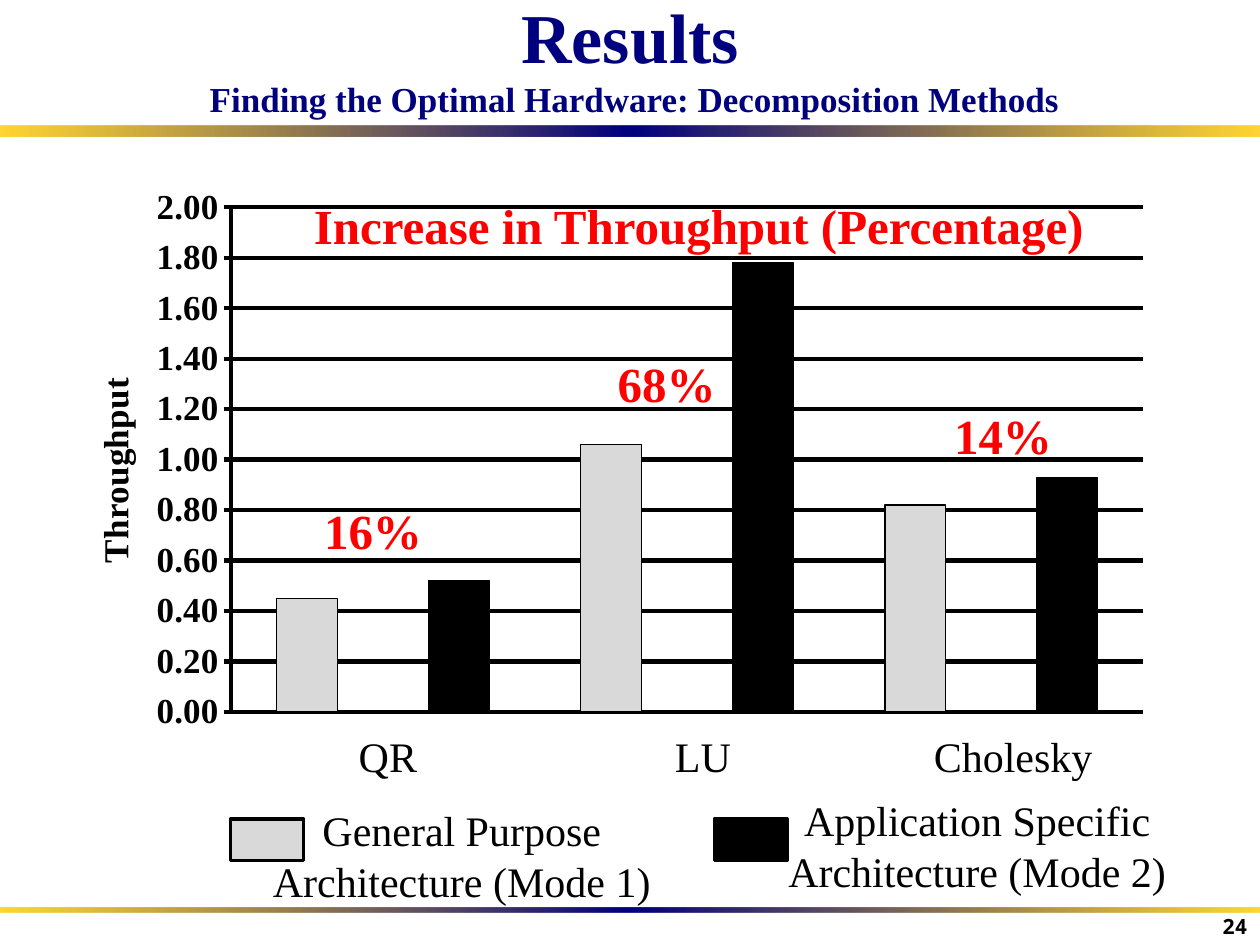
from lxml import etree
from pptx import Presentation
from pptx.chart.data import CategoryChartData
from pptx.dml.color import RGBColor
from pptx.enum.chart import XL_CHART_TYPE, XL_TICK_MARK
from pptx.enum.shapes import MSO_SHAPE
from pptx.enum.text import MSO_ANCHOR, MSO_AUTO_SIZE, PP_ALIGN
from pptx.oxml import parse_xml
from pptx.oxml.ns import nsdecls, qn
from pptx.util import Cm, Pt

COLUMNS = XL_CHART_TYPE.COLUMN_CLUSTERED
CROSS = XL_TICK_MARK.CROSS
RECTANGLE = MSO_SHAPE.RECTANGLE
BOTTOM, TOP = MSO_ANCHOR.BOTTOM, MSO_ANCHOR.TOP
FIT_SHAPE, NO_FIT = MSO_AUTO_SIZE.SHAPE_TO_FIT_TEXT, MSO_AUTO_SIZE.NONE
CENTER, RIGHT = PP_ALIGN.CENTER, PP_ALIGN.RIGHT

SERIF = "Times New Roman"
NAVY, GOLD, RED = "00007F", "FFCC00", "FF0000"
BLACK, GREY = "000000", "D9D9D9"
MODE_COLORS = (GREY, BLACK)
THROUGHPUT = (0.45, 0.52, 1.06, 1.78, 0.82, 0.93)


def color(hex_text):
    return RGBColor.from_string(hex_text)


def lengths(box):
    return [Cm(value) for value in box]


def style_font(font, size, hex_text, bold=False, name=SERIF):
    font.name, font.size, font.bold = name, Pt(size), bold
    font.color.rgb = color(hex_text)


def style_line(line, width, hex_text=BLACK):
    line.width = Pt(width)
    line.color.rgb = color(hex_text)


def add_label(page, box, text, size, hex_text=BLACK, bold=False,
              name=SERIF, align=CENTER, anchor=TOP, fit=FIT_SHAPE):
    frame = page.shapes.add_textbox(*lengths(box)).text_frame
    frame.word_wrap = True
    frame.auto_size = fit
    frame.vertical_anchor = anchor
    frame.text = text
    para = frame.paragraphs[0]
    para.alignment = align
    style_font(para.runs[0].font, size, hex_text, bold, name)


def add_rectangle(page, box):
    shape = page.shapes.add_shape(RECTANGLE, *lengths(box))
    shape.shadow.inherit = False
    return shape


def add_rule(page, box):
    """Horizontal band fading from gold to navy and back."""
    rule = add_rectangle(page, box)
    rule.line.fill.background()
    gold = f'<a:srgbClr val="{GOLD}"><a:alpha val="80000"/></a:srgbClr>'
    gradient = parse_xml(
        f'<a:gradFill {nsdecls("a")} rotWithShape="1"><a:gsLst>'
        f'<a:gs pos="0">{gold}</a:gs>'
        f'<a:gs pos="50000"><a:srgbClr val="{NAVY}"/></a:gs>'
        f'<a:gs pos="100000">{gold}</a:gs>'
        '</a:gsLst><a:lin ang="0" scaled="0"/></a:gradFill>')
    rule._element.spPr.find(qn("a:prstGeom")).addnext(gradient)


def add_heading(page, box):
    title = page.shapes.title
    title.left, title.top, title.width, title.height = lengths(box)
    frame = title.text_frame
    frame.auto_size = NO_FIT
    frame.vertical_anchor = BOTTOM
    frame.text = ("Results\v Finding the Optimal Hardware: "
                  "Decomposition Methods")
    para = frame.paragraphs[0]
    para.alignment = CENTER
    para.line_spacing = 1.0
    for span, size in zip(para.runs, (40, 20)):
        style_font(span.font, size, NAVY, True)


def set_layout(parent, values, inner=False):
    """Place a chart part by fractions of the chart's size."""
    old = parent.find(qn("c:layout"))
    if old is not None:
        parent.remove(old)
    layout = etree.Element(qn("c:layout"))
    manual = etree.SubElement(layout, qn("c:manualLayout"))
    settings = {"layoutTarget": "inner"} if inner else {}
    settings.update(xMode="edge", yMode="edge", **values)
    for tag, value in settings.items():
        etree.SubElement(manual, qn(f"c:{tag}")).set("val", str(value))
    text = parent.find(qn("c:tx"))
    if text is None:
        parent.insert(0, layout)
    else:
        text.addnext(layout)


def add_throughput_chart(page, box):
    data = CategoryChartData(number_format="0.00")
    data.categories = [str(i + 1) for i in range(len(THROUGHPUT))]
    data.add_series("Series 1", THROUGHPUT)
    chart = page.shapes.add_chart(COLUMNS, *lengths(box), data).chart
    style_font(chart.font, 20, BLACK, True)
    chart.has_legend = chart.has_title = False
    set_layout(chart._chartSpace.chart.plotArea,
               {"x": 0.16, "y": 0.05, "w": 0.82, "h": 0.89}, True)

    # Bars alternate between the two modes
    plot = chart.plots[0]
    plot.gap_width = 150
    plot.vary_by_categories = False
    series = plot.series[0]
    for i in range(len(THROUGHPUT)):
        bar = series.points[i].format
        bar.fill.solid()
        bar.fill.fore_color.rgb = color(MODE_COLORS[i % 2])
        style_line(bar.line, 0.75)

    # Axes
    chart.category_axis.visible = False
    axis = chart.value_axis
    axis.minimum_scale, axis.maximum_scale, axis.major_unit = 0, 2, 0.2
    axis.major_tick_mark = CROSS
    axis.tick_labels.number_format = "#,##0.00"
    axis.tick_labels.number_format_is_linked = False
    style_line(axis.format.line, 2.5)
    style_line(axis.major_gridlines.format.line, 2.5)
    axis_title = axis.axis_title
    axis_title.text_frame.text = "Throughput"
    span = axis_title.text_frame.paragraphs[0].runs[0]
    style_font(span.font, 20, BLACK, True)
    set_layout(axis_title._element, {"x": 0.03, "y": 0.34})


def add_chart_labels(page, box):
    left, top = box[:2]
    for x, width, text in ((5.48, 2.54, "QR"), (11.83, 2.54, "LU"),
                           (17.35, 4.01, "Cholesky")):
        add_label(page, (left + x, top + 11, width, 1.27), text, 24)
    for x, y, width, text in (
            (4.86, 0.2, 16.31, "Increase in Throughput (Percentage)"),
            (11, 3.4, 2.74, "68%"),
            (5.08, 6.35, 2.74, "16%"),
            (17.78, 4.44, 2.74, "14%")):
        add_label(page, (left + x, top + y, width, 1.45), text, 28, RED, True)


def add_legend_entry(page, box, hex_text, offset, text):
    left, top, width, height = box
    swatch = add_rectangle(page, (left, top, 1.47, 0.84))
    swatch.fill.solid()
    swatch.fill.fore_color.rgb = color(hex_text)
    style_line(swatch.line, 2)
    x, y = offset
    add_label(page, (left + x, top + y, width, height), text, 24)


def main():
    deck = Presentation()
    deck.slide_width, deck.slide_height = Cm(25.4), Cm(19.05)
    page = deck.slides.add_slide(deck.slide_layouts[5])

    add_rule(page, (0, 2.54, 25.4, 0.21))
    add_rule(page, (0, 18.29, 25.4, 0.11))
    add_heading(page, (0.64, 0.58, 24.13, 1.96))

    chart_box = (1.07, 3.61, 22.43, 11.43)
    add_throughput_chart(page, chart_box)
    add_chart_labels(page, chart_box)

    add_legend_entry(page, (4.65, 16.51, 9.32, 2.31), GREY, (0, -0.41),
                     "General Purpose Architecture (Mode 1)")
    add_legend_entry(page, (14.4, 16.51, 9.32, 2.31), BLACK, (0.64, -0.61),
                     "Application Specific Architecture (Mode 2)")

    # Page number
    add_label(page, (24.36, 18.21, 1.04, 0.84), "24", 12, bold=True,
              name="Noto Sans Mono", align=RIGHT, anchor=BOTTOM, fit=NO_FIT)
    deck.save("out.pptx")


if __name__ == "__main__":
    main()
